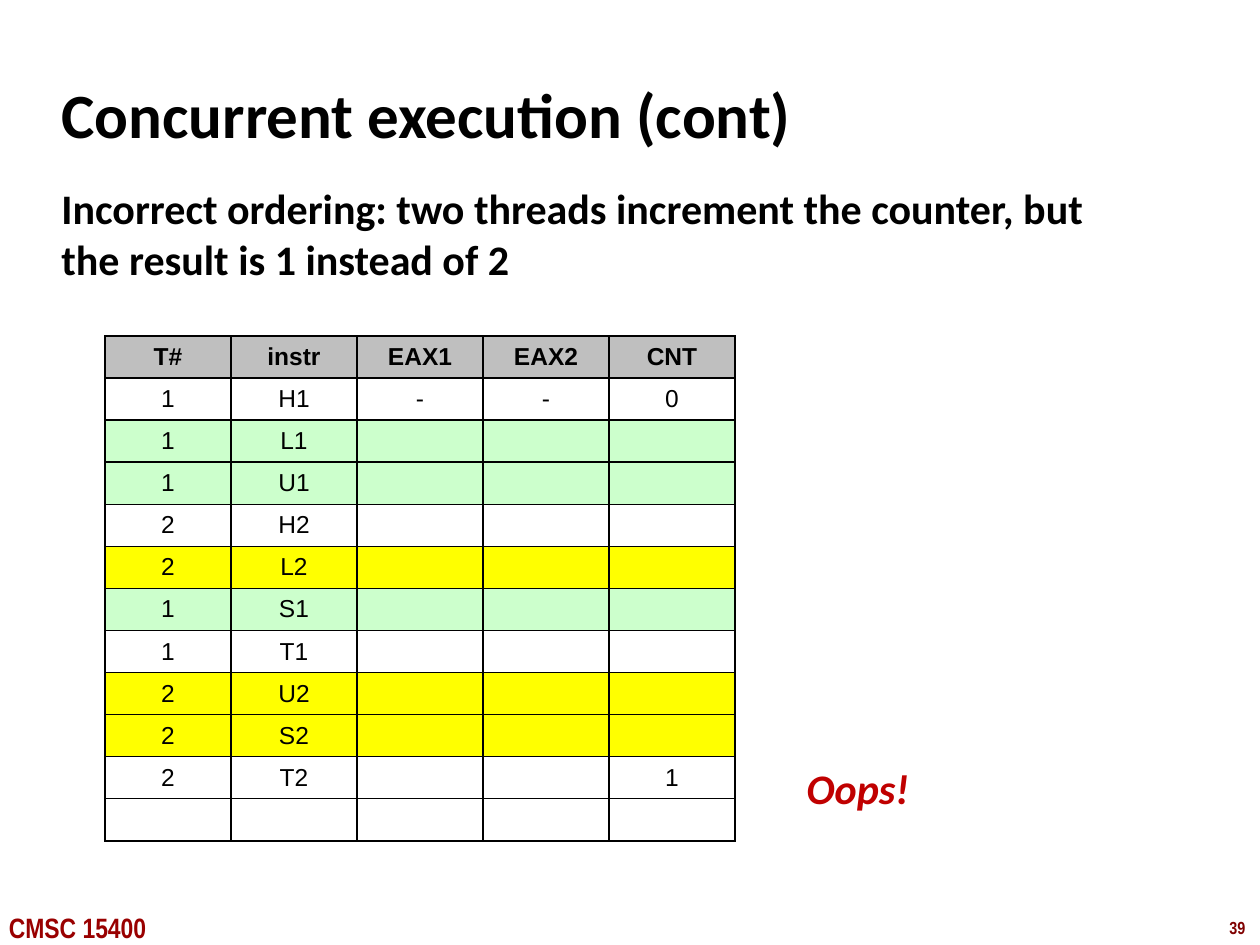
from lxml.etree import SubElement
from pptx import Presentation
from pptx.dml.color import RGBColor
from pptx.enum.text import MSO_ANCHOR, PP_ALIGN
from pptx.oxml.ns import qn
from pptx.util import Pt

COLORS = {
    "text": "000000", "border": "000000", "header": "BFBFBF",
    "plain": "FFFFFF", "thread1": "CCFFCC", "thread2": "FFFF00",
    "oops": "C00000", "course": "990000", "number": "800000",
}

HEADER = ["T#", "instr", "EAX1", "EAX2", "CNT"]
# Row fill, then the cell texts from the left
TRACE = [
    ("plain", ["1", "H1", "-", "-", "0"]),
    ("thread1", ["1", "L1"]),
    ("thread1", ["1", "U1"]),
    ("plain", ["2", "H2"]),
    ("thread2", ["2", "L2"]),
    ("thread1", ["1", "S1"]),
    ("plain", ["1", "T1"]),
    ("thread2", ["2", "U2"]),
    ("thread2", ["2", "S2"]),
    ("plain", ["2", "T2", "", "", "1"]),
    ("plain", []),
]
COL_WIDTH, ROW_HEIGHT, CELL_SIZE = 72, 24, 14


def rgb(name):
    return RGBColor.from_string(COLORS[name])


def write(tf, text, size=24, font="Calibri", color="text", bold=True,
          italic=False, align=PP_ALIGN.LEFT):
    p = tf.paragraphs[0]
    p.alignment = align
    r = p.add_run()
    r.text = text
    r.font.size = Pt(size)
    r.font.name = font
    r.font.bold = bold
    r.font.italic = italic
    r.font.color.rgb = rgb(color)


def add_text(s, box, text, wrap=False, anchor=MSO_ANCHOR.TOP, **fmt):
    tf = s.shapes.add_textbox(*map(Pt, box)).text_frame
    tf.word_wrap = wrap
    tf.vertical_anchor = anchor
    write(tf, text, **fmt)


def set_title(s, box, text):
    sp = s.shapes.title
    sp.left, sp.top, sp.width, sp.height = map(Pt, box)
    sp.text_frame.vertical_anchor = MSO_ANCHOR.MIDDLE
    write(sp.text_frame, text, size=36)


def border_cell(cell):
    tc_pr = cell._tc.get_or_add_tcPr()
    for i, side in enumerate(("a:lnL", "a:lnR", "a:lnT", "a:lnB")):
        ln = tc_pr.makeelement(qn(side), {"w": str(Pt(1))})
        fill = SubElement(ln, qn("a:solidFill"))
        SubElement(fill, qn("a:srgbClr"), val=COLORS["border"])
        tc_pr.insert(i, ln)  # borders come before the fill


def fill_cell(cell, text, fill, bold):
    cell.fill.solid()
    cell.fill.fore_color.rgb = rgb(fill)
    cell.vertical_anchor = MSO_ANCHOR.MIDDLE
    border_cell(cell)
    if text:
        write(cell.text_frame, text, size=CELL_SIZE, font="Arial", bold=bold,
              align=PP_ALIGN.CENTER)
    else:
        # Keeps an empty cell from growing its row
        SubElement(cell.text_frame.paragraphs[0]._p, qn("a:endParaRPr"),
                   sz=str(CELL_SIZE * 100))


def add_trace_table(s, left, top):
    rows = [("header", HEADER)] + TRACE
    n = len(HEADER)
    table = s.shapes.add_table(len(rows), n, Pt(left), Pt(top),
                               Pt(n * COL_WIDTH),
                               Pt(len(rows) * ROW_HEIGHT)).table
    table.horz_banding = False
    for col in table.columns:
        col.width = Pt(COL_WIDTH)
    for i, (fill, texts) in enumerate(rows):
        table.rows[i].height = Pt(ROW_HEIGHT)
        for j in range(n):
            text = texts[j] if j < len(texts) else ""
            fill_cell(table.cell(i, j), text, fill, bold=i == 0)


def main():
    prs = Presentation()
    prs.slide_width, prs.slide_height = Pt(720), Pt(540)
    s = prs.slides.add_slide(prs.slide_layouts[5])

    # Footer
    add_text(s, (695.5, 520.5, 24.5, 19.5), "39", size=10,
             font="Arial Narrow", color="number")
    add_text(s, (-2, 516.5, 102, 26.5), "CMSC 15400", size=16,
             font="Arial Narrow", color="course")

    # Title and statement
    set_title(s, (28, 34.5, 597.5, 60), "Concurrent execution (cont)")
    add_text(s, (28, 101, 622, 67.5),
             "Incorrect ordering: two threads increment the counter, but "
             "the result is 1 instead of 2", wrap=True)

    # Instruction trace and its outcome
    add_trace_table(s, 60, 192)
    add_text(s, (453.5, 432, 73.5, 36), "Oops!", anchor=MSO_ANCHOR.MIDDLE,
             color="oops", italic=True, align=PP_ALIGN.CENTER)

    prs.save("out.pptx")


if __name__ == "__main__":
    main()
